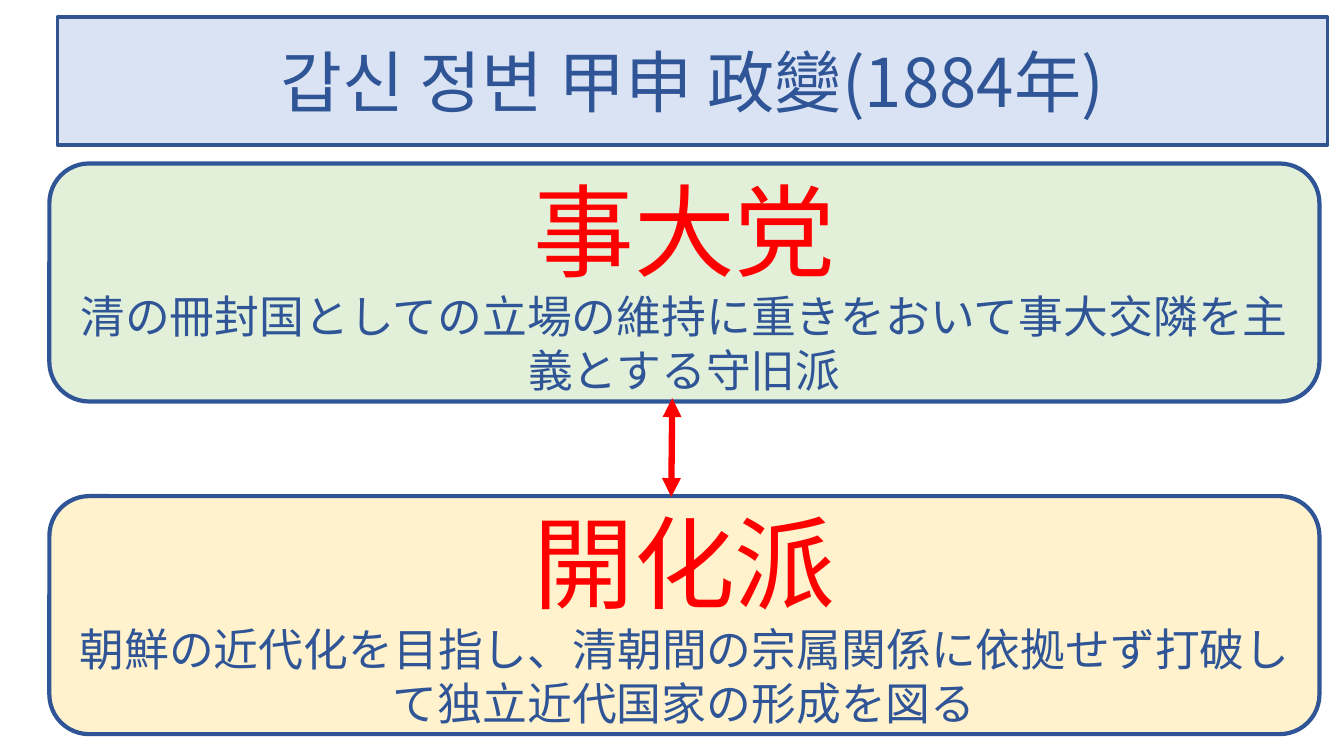
from dataclasses import dataclass

from lxml import etree
from pptx import Presentation
from pptx.dml.color import RGBColor
from pptx.enum.shapes import MSO_CONNECTOR, MSO_SHAPE
from pptx.enum.text import MSO_ANCHOR, MSO_AUTO_SIZE, PP_ALIGN
from pptx.oxml.ns import qn
from pptx.util import Pt

ROUNDED = MSO_SHAPE.ROUNDED_RECTANGLE
STRAIGHT = MSO_CONNECTOR.STRAIGHT
MIDDLE = MSO_ANCHOR.MIDDLE
CENTER = PP_ALIGN.CENTER
NO_AUTOFIT = MSO_AUTO_SIZE.NONE
TITLE_ONLY = 5


@dataclass(frozen=True)
class Theme:
    font: str = "Noto Sans CJK JP"
    ink: str = "2F5597"
    accent: str = "FF0000"
    title_fill: str = "DAE3F3"
    title_line: str = "325491"
    conservative_fill: str = "E2F0D9"
    reform_fill: str = "FFF2CC"
    title_size: float = 48
    name_size: float = 72
    body_size: float = 32


class SlideBuilder:
    def __init__(self, slide, theme):
        self.slide = slide
        self.theme = theme

    def paint(self, box, fill, line, weight):
        box.fill.solid()
        box.fill.fore_color.rgb = RGBColor.from_string(fill)
        box.line.color.rgb = RGBColor.from_string(line)
        box.line.width = Pt(weight)

    def set_text(self, box, lines):
        """Fill a box with centred (text, size, colour) paragraphs."""
        frame = box.text_frame
        frame.word_wrap = True
        frame.auto_size = NO_AUTOFIT
        frame.vertical_anchor = MIDDLE
        frame.text = "\n".join(text for text, _, _ in lines)
        for para, (_, size, color) in zip(frame.paragraphs, lines):
            para.alignment = CENTER
            para.font.size = Pt(size)
            para.font.color.rgb = RGBColor.from_string(color)
            para.font.name = self.theme.font
            # East Asian glyphs take their own typeface entry
            defaults = para._p.pPr.find(qn("a:defRPr"))
            etree.SubElement(defaults, qn("a:ea"), typeface=self.theme.font)

    def title(self, text, left, top, width, height):
        box = self.slide.shapes.title
        box.left, box.top = Pt(left), Pt(top)
        box.width, box.height = Pt(width), Pt(height)
        self.paint(box, self.theme.title_fill, self.theme.title_line, 2.5)
        self.set_text(box, [(text, self.theme.title_size, self.theme.ink)])

    def faction(self, name, description, fill, left, top, width, height):
        box = self.slide.shapes.add_shape(
            ROUNDED, Pt(left), Pt(top), Pt(width), Pt(height))
        box.shadow.inherit = False
        self.paint(box, fill, self.theme.ink, 3)
        self.set_text(box, [
            (name, self.theme.name_size, self.theme.accent),
            (description, self.theme.body_size, self.theme.ink),
        ])

    def double_arrow(self, start, end):
        arrow = self.slide.shapes.add_connector(
            STRAIGHT, *(Pt(value) for value in start + end))
        arrow.line.color.rgb = RGBColor.from_string(self.theme.accent)
        arrow.line.width = Pt(4.5)
        properties = arrow._element.spPr
        line = properties.find(qn("a:ln"))
        for tag in ("a:headEnd", "a:tailEnd"):
            etree.SubElement(line, qn(tag), type="triangle")
        etree.SubElement(properties, qn("a:effectLst"))


def main():
    deck = Presentation()
    deck.slide_width, deck.slide_height = Pt(960), Pt(540)
    theme = Theme()
    page = SlideBuilder(
        deck.slides.add_slide(deck.slide_layouts[TITLE_ONLY]), theme)

    # Title band
    width = 907.2
    page.title("갑신 정변 甲申 政變(1884年)", 41, 12.2, width, 91.4)

    # The two opposing factions
    factions = [
        ("事大党",
         "清の冊封国としての立場の維持に重きをおいて事大交隣を主義とする守旧派",
         theme.conservative_fill),
        ("開化派",
         "朝鮮の近代化を目指し、清朝間の宗属関係に依拠せず打破して独立近代国家の形成を図る",
         theme.reform_fill),
    ]
    first_top, pitch = 116.8, 237.6
    for index, (name, description, fill) in enumerate(factions):
        page.faction(name, description, fill,
                     35.3, first_top + index * pitch, width, 170)

    # Opposition between them
    page.double_arrow((480.2, 284.4), (479.5, 355))

    deck.save("out.pptx")


if __name__ == "__main__":
    main()
